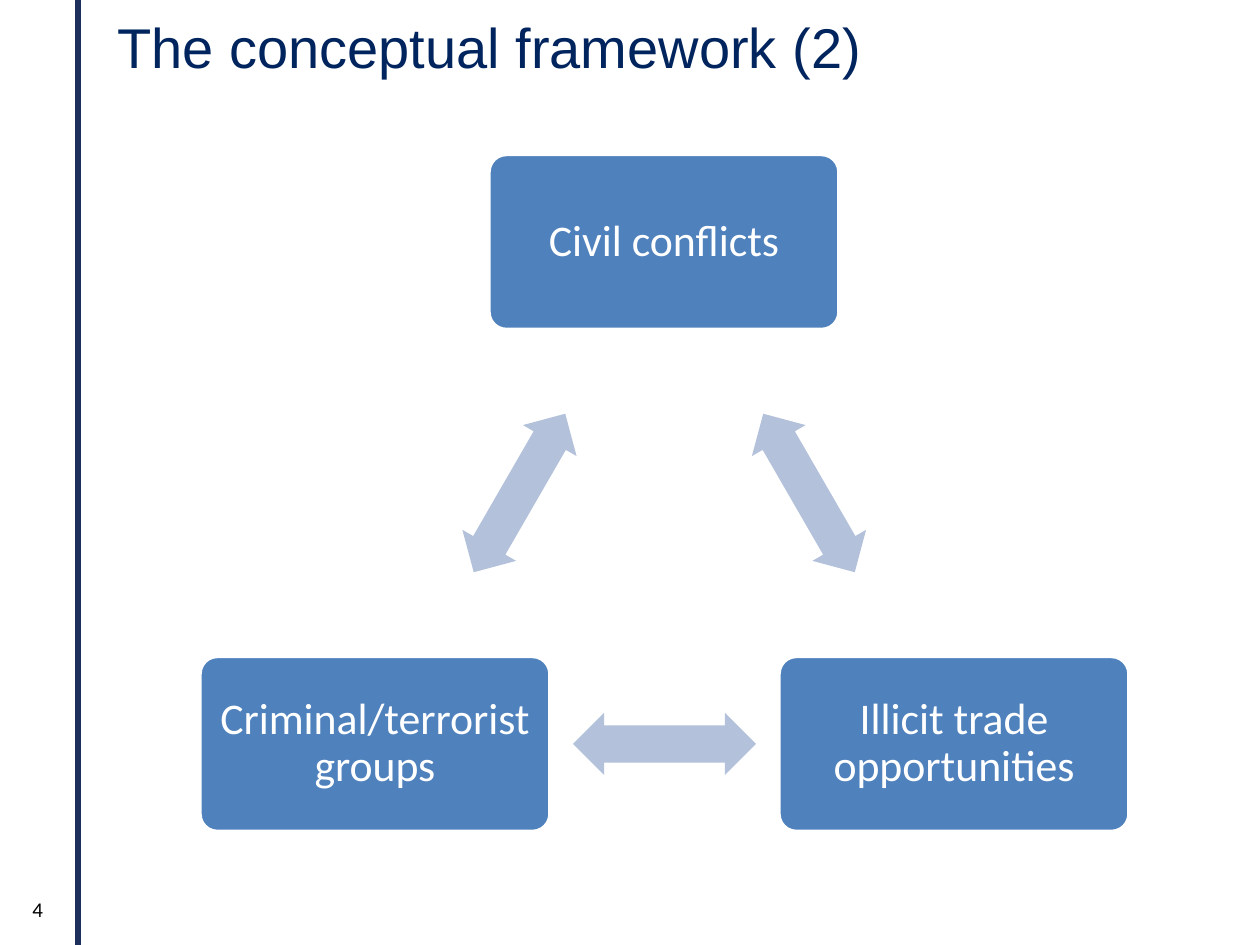
from pptx import Presentation
from pptx.dml.color import RGBColor
from pptx.enum.shapes import MSO_SHAPE
from pptx.enum.text import MSO_ANCHOR, PP_ALIGN
from pptx.util import Pt

PX = 914400 / 126
RECT, ROUNDED = MSO_SHAPE.RECTANGLE, MSO_SHAPE.ROUNDED_RECTANGLE
DOUBLE_ARROW = MSO_SHAPE.LEFT_RIGHT_ARROW
MIDDLE, CENTER = MSO_ANCHOR.MIDDLE, PP_ALIGN.CENTER
COLORS = {"bar": "1C305B", "node": "4F81BD", "arrow": "B3C1DB",
          "title": "00245D", "white": "FFFFFF", "black": "000000"}

prs = Presentation()
prs.slide_width, prs.slide_height = round(1260 * PX), round(945 * PX)
slide = prs.slides.add_slide(prs.slide_layouts[6])


def add_block(kind, left, top, width, height, color):
    block = slide.shapes.add_shape(kind, *[round(v * PX) for v in (left, top, width, height)])
    block.shadow.inherit = False
    block.fill.solid()
    block.fill.fore_color.rgb = RGBColor.from_string(COLORS[color])
    block.line.fill.background()
    return block


def write(frame, text, size, font, color):
    frame.word_wrap = True
    frame.text = text
    run_font = frame.paragraphs[0].runs[0].font
    run_font.size, run_font.name = Pt(size), font
    run_font.color.rgb = RGBColor.from_string(COLORS[color])


# Vertical bar at the left
add_block(RECT, 75, 0, 6, 945, "bar")

# Title and page number
for text, left, top, width, height, size, font, color in [
    ("4", 20, 890, 57, 50, 12, "Calibri", "black"),
    ("The conceptual framework (2)", 105, 6, 1125, 73, 32, "Arial", "title"),
]:
    box = slide.shapes.add_textbox(*[round(v * PX) for v in (left, top, width, height)])
    write(box.text_frame, text, size, font, color)

# Triangle of concepts: label, centre x, centre y
NODE_W, NODE_H = 350, 175
concepts = [("Civil conflicts", 664, 242),
            ("Illicit trade opportunities", 954, 744),
            ("Criminal/terrorist groups", 375, 744)]
for label, x, y in concepts:
    node = add_block(ROUNDED, x - NODE_W / 2, y - NODE_H / 2, NODE_W, NODE_H, "node")
    node.adjustments[0] = 0.1
    node.line.color.rgb = RGBColor.from_string(COLORS["white"])
    node.line.width = Pt(2)
    frame = node.text_frame
    write(frame, label, 25, "Calibri", "white")
    frame.vertical_anchor = MIDDLE
    frame.margin_left = frame.margin_right = round(8 * PX)
    frame.margin_top = frame.margin_bottom = round(8 * PX)
    frame.paragraphs[0].alignment = CENTER
    frame.paragraphs[0].line_spacing = 0.9

# Double arrows halfway between neighbouring concepts
ARROW_W, ARROW_H = 183, 62
for i, angle in enumerate([60, 180, 300]):
    (_, x1, y1), (_, x2, y2) = concepts[i], concepts[(i + 1) % 3]
    arrow = add_block(DOUBLE_ARROW, (x1 + x2 - ARROW_W) / 2, (y1 + y2 - ARROW_H) / 2,
                      ARROW_W, ARROW_H, "arrow")
    arrow.adjustments[0], arrow.adjustments[1] = 0.6, 0.5
    arrow.rotation = angle

prs.save("out.pptx")
